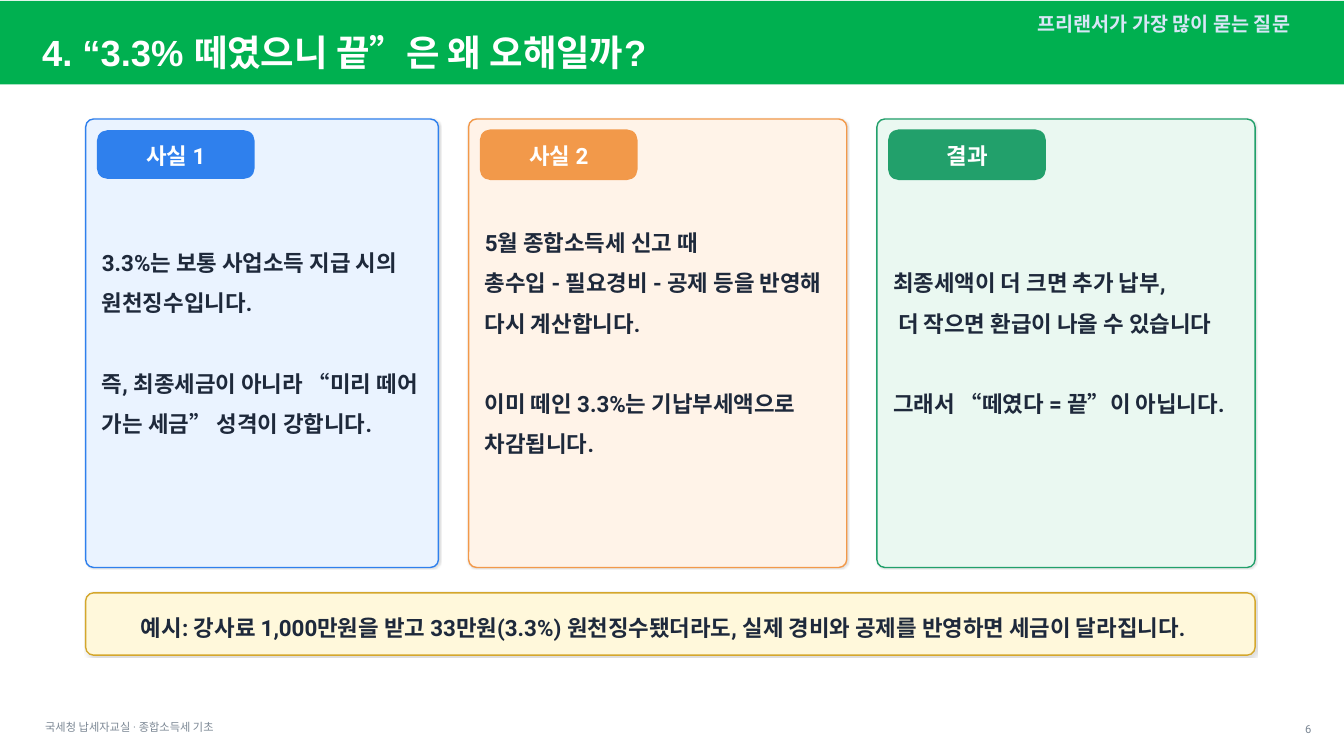
import pptx
import pptx.util
import pptx.dml.color
import pptx.enum.shapes
import pptx.enum.text
import pptx.oxml
import pptx.oxml.ns

Cm = pptx.util.Cm
Pt = pptx.util.Pt
SHAPE = pptx.enum.shapes.MSO_SHAPE
ALIGN = pptx.enum.text.PP_ALIGN

COLORS = {
    "header": "00B050", "white": "FFFFFF", "topic": "D8E6F7",
    "muted": "7B8794", "ink": "1E293B",
    "blue": "2F80ED", "pale blue": "EAF3FF",
    "orange": "F2994A", "pale orange": "FFF3E8",
    "green": "22A06B", "pale green": "EAF8F1",
    "gold": "D4A72C", "pale gold": "FFF8DB",
}
TITLE = "4. “3.3% 떼였으니 끝”은 왜 오해일까?"
TOPIC = "프리랜서가 가장 많이 묻는 질문"
FOOTER = "국세청 납세자교실 · 종합소득세 기초"
PAGE = "6"
EXAMPLE = ("예시: 강사료 1,000만원을 받고 33만원(3.3%) 원천징수됐더라도, "
           "실제 경비와 공제를 반영하면 세금이 달라집니다.")
CARDS = [
    {"label": "사실 1", "color": "blue", "width": 8.89, "badge": (3.3, 1.19),
     "facts": ["3.3%는 보통 사업소득 지급 시의 원천징수입니다."],
     "conclusion": "즉, 최종세금이 아니라 “미리 떼어 가는 세금” 성격이 강합니다."},
    {"label": "사실 2", "color": "orange", "width": 9.53, "badge": (3.28, 1.24),
     "facts": ["5월 종합소득세 신고 때",
               "총수입 - 필요경비 - 공제 등을 반영해 다시 계산합니다."],
     "conclusion": "이미 떼인 3.3%는 기납부세액으로 차감됩니다."},
    {"label": "결과", "color": "green", "width": 9.53, "badge": (3.28, 1.24),
     "facts": ["최종세액이 더 크면 추가 납부,",
               " 더 작으면 환급이 나올 수 있습니다"],
     "conclusion": "그래서 “떼였다 = 끝”이 아닙니다."},
]
CARD_LEFT, CARD_TOP, CARD_HEIGHT, CARD_GAP = 2.16, 3.0, 11.3, 0.76
BADGE_INSET, TEXT_INSET = 0.3, 0.41
CARD_RADIUS, BADGE_RADIUS = 0.2, 0.25
BLANK_LINE = 28.8
SHADOW = (
    '<a:outerShdw xmlns:a="http://schemas.openxmlformats.org/drawingml/2006/main"'
    ' blurRad="12700" dist="6350" dir="2700000" algn="ctr" rotWithShape="0">'
    '<a:srgbClr val="000000"><a:alpha val="12000"/></a:srgbClr></a:outerShdw>'
)


def rgb(color):
    return pptx.dml.color.RGBColor.from_string(COLORS[color])


def add_panel(slide, left, top, width, height, fill, line=None, radius=0, shadow=False):
    kind = SHAPE.ROUNDED_RECTANGLE if radius else SHAPE.RECTANGLE
    panel = slide.shapes.add_shape(kind, Cm(left), Cm(top), Cm(width), Cm(height))
    if radius:
        panel.adjustments[0] = radius / min(width, height)
    panel.fill.solid()
    panel.fill.fore_color.rgb = rgb(fill)
    if line:
        panel.line.color.rgb = rgb(line)
        panel.line.width = Pt(1)
    else:
        panel.line.fill.background()
    panel.shadow.inherit = False
    if shadow:
        effects = panel._element.spPr.find(pptx.oxml.ns.qn("a:effectLst"))
        effects.append(pptx.oxml.parse_xml(SHADOW))


def add_text(slide, left, top, width, height, text, size, color,
             font="Roboto", bold=True, align=ALIGN.LEFT):
    box = slide.shapes.add_textbox(Cm(left), Cm(top), Cm(width), Cm(height))
    frame = box.text_frame
    frame.word_wrap = True
    frame.vertical_anchor = pptx.enum.text.MSO_ANCHOR.MIDDLE
    frame.text = text
    for paragraph in frame.paragraphs:
        paragraph.alignment = align
        for run in paragraph.runs:
            run.font.name = font
            run.font.size = Pt(size)
            run.font.bold = bold
            run.font.color.rgb = rgb(color)
    return frame


def add_card(slide, card, left):
    color, width = card["color"], card["width"]
    badge_top, badge_height = card["badge"]
    add_panel(slide, left, CARD_TOP, width, CARD_HEIGHT, "pale " + color, color,
              CARD_RADIUS, shadow=True)
    add_panel(slide, left + BADGE_INSET, badge_top, 3.94, badge_height, color, color,
              BADGE_RADIUS)
    add_text(slide, left + TEXT_INSET, 3.73, 3.73, 0.38, card["label"], 16, "white",
             align=ALIGN.CENTER)
    body = add_text(slide, left + TEXT_INSET, 4.67, width - 2 * TEXT_INSET, 7.62,
                    "\n".join(card["facts"] + [card["conclusion"]]), 16, "ink")
    body.margin_left = body.margin_right = body.margin_top = body.margin_bottom = 0
    for paragraph in body.paragraphs:
        paragraph.line_spacing = 1.5
    body.paragraphs[-1].space_before = Pt(BLANK_LINE)


def main():
    deck = pptx.Presentation()
    deck.slide_width, deck.slide_height = Cm(33.87), Cm(19.05)
    slide = deck.slides.add_slide(deck.slide_layouts[6])

    add_panel(slide, 0, 0.02, 33.87, 2.11, "header")
    add_text(slide, 0.81, 1.02, 18.54, 0.58, TITLE, 26, "white", font="Arial")
    add_text(slide, 22.1, 0.36, 10.67, 0.46, TOPIC, 14, "topic", font="Arial",
             align=ALIGN.RIGHT)
    add_text(slide, 32.64, 18.16, 0.56, 0.41, PAGE, 8, "muted", bold=False,
             align=ALIGN.RIGHT)
    add_text(slide, 0.89, 18.08, 10.16, 0.46, FOOTER, 8, "muted", bold=False)

    left = CARD_LEFT
    for card in CARDS:
        add_card(slide, card, left)
        left += card["width"] + CARD_GAP

    add_panel(slide, CARD_LEFT, 14.94, left - CARD_GAP - CARD_LEFT, 1.57,
              "pale gold", "gold", CARD_RADIUS, shadow=True)
    add_text(slide, 1.96, 15.67, 29.51, 0.28, EXAMPLE, 16, "ink", align=ALIGN.CENTER)
    deck.save("out.pptx")


if __name__ == "__main__":
    main()
